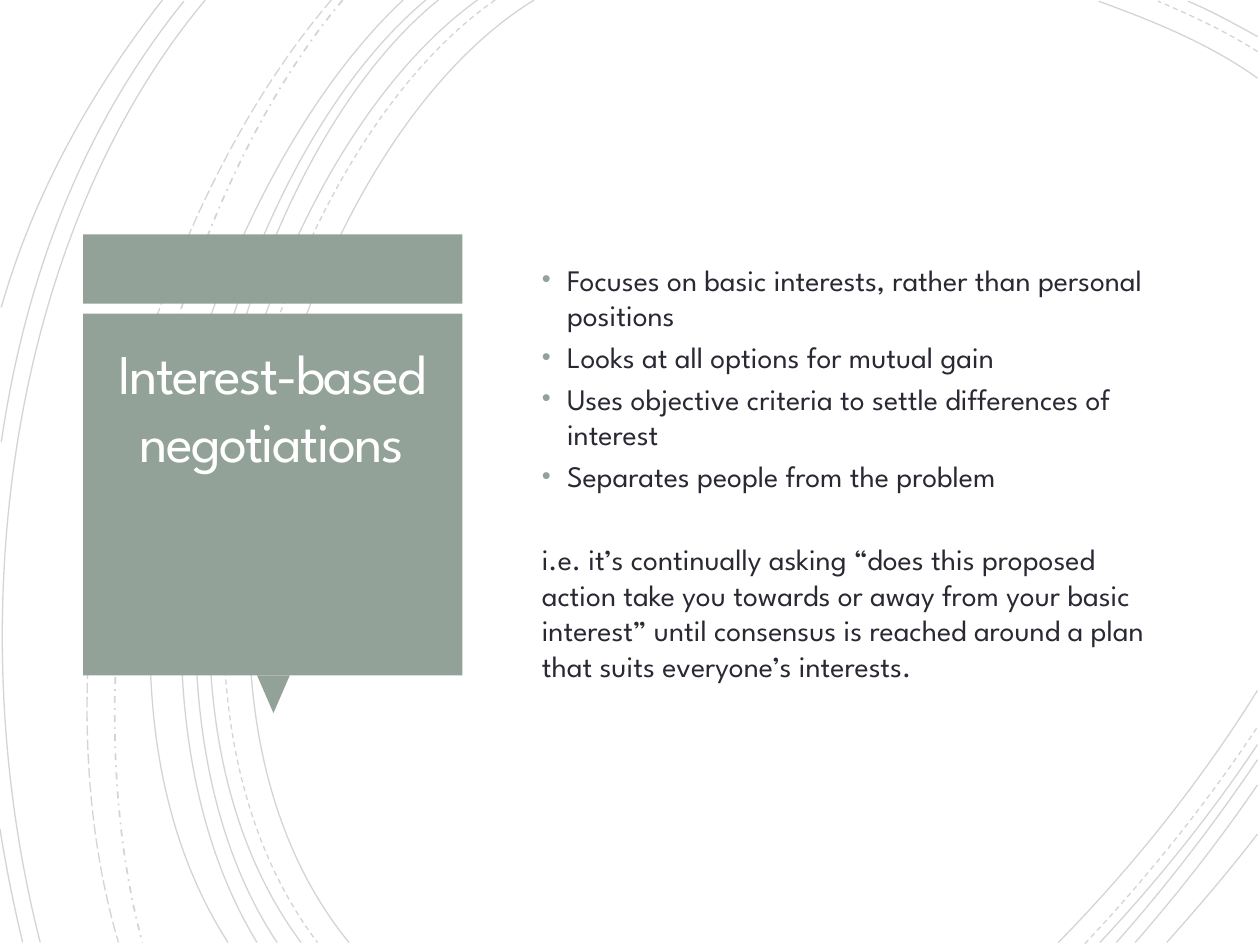
from lxml.etree import SubElement
from pptx import Presentation
from pptx.dml.color import RGBColor
from pptx.enum.dml import MSO_LINE
from pptx.enum.shapes import MSO_SHAPE
from pptx.enum.text import MSO_ANCHOR, MSO_AUTO_SIZE, PP_ALIGN
from pptx.oxml.ns import qn
from pptx.util import Inches, Pt

FONT = "League Spartan"
INK, SAGE, WHITE = "292934", "93A299", "FFFFFF"

TITLE = "Interest-based negotiations"
POINTS = [
    "Focuses on basic interests, rather than personal positions",
    "Looks at all options for mutual gain",
    "Uses objective criteria to settle differences of interest",
    "Separates people from the problem",
]
SUMMARY = (
    "i.e. it’s continually asking “does this proposed action take you towards or away "
    "from your basic interest” until consensus is reached around a plan that suits "
    "everyone’s interests."
)

# Each arc: start, two control points, end
SOLID_ARCS = [
    [(4.24, 0), (2.36, 1.15), (1.07, 5.4), (2.77, 7.48)],
    [(9.98, 0.62), (9.59, 0.34), (9.13, 0.16), (8.72, 0.01)],
    [(8.4, 7.48), (8.97, 6.9), (9.52, 6.22), (9.98, 5.48)],
    [(3.79, 0), (2.02, 1.27), (0.82, 5.37), (2.39, 7.48)],
    [(9.98, 0.29), (9.8, 0.19), (9.62, 0.09), (9.43, 0.01)],
    [(8.73, 7.48), (9.17, 7.01), (9.6, 6.48), (9.98, 5.91)],
    [(3.48, 0), (1.83, 1.33), (0.82, 5.41), (2.2, 7.48)],
    [(8.86, 7.48), (9.25, 7.04), (9.63, 6.55), (9.98, 6.03)],
    [(3.38, 0), (1.73, 1.38), (0.73, 5.33), (2.04, 7.48)],
    [(9.01, 7.48), (9.35, 7.09), (9.68, 6.67), (9.98, 6.23)],
    [(3.2, 0), (1.63, 1.47), (0.4, 5.29), (1.81, 7.48)],
    [(9.26, 7.48), (9.5, 7.21), (9.75, 6.92), (9.98, 6.62)],
    [(1.63, 0), (0.08, 1.85), (-0.34, 4.9), (0.32, 7.48)],
    [(1.46, 0.01), (0.69, 0.96), (0.21, 2.14), (0.01, 3.51)],
    [(0, 6.58), (0.05, 6.89), (0.11, 7.19), (0.18, 7.48)],
    [(1.29, 0), (0.75, 0.69), (0.28, 1.5), (0.01, 2.44)],
]
DASHED_ARCS = [
    [(3.93, 0), (2.13, 1.25), (0.92, 5.37), (2.52, 7.48)],
    [(9.98, 0.41), (9.73, 0.25), (9.45, 0.12), (9.19, 0.01)],
    [(8.61, 7.49), (9.09, 6.98), (9.56, 6.4), (9.98, 5.77)],
]
DASH_DOT_ARCS = [[(2.72, 0), (1.32, 1.66), (0.49, 5.09), (1.13, 7.48)]]
LONG_DASH_ARCS = [[(2.63, 0), (1.18, 1.69), (0.21, 4.99), (0.94, 7.48)]]
ARC_STYLES = [
    (SOLID_ARCS, MSO_LINE.SOLID, 0.75),
    (DASHED_ARCS, MSO_LINE.DASH, 0.75),
    (DASH_DOT_ARCS, MSO_LINE.DASH_DOT, 1),
    (LONG_DASH_ARCS, MSO_LINE.LONG_DASH, 0.75),
]

CALLOUT = [
    (MSO_SHAPE.RECTANGLE, (0.66, 1.86, 3.01, 0.55), 0),
    (MSO_SHAPE.ISOSCELES_TRIANGLE, (2.04, 5.36, 0.26, 0.3), 180),
    (MSO_SHAPE.RECTANGLE, (0.66, 2.49, 3.01, 2.87), 0),
]


def rgb(value):
    return RGBColor.from_string(value)


def draw_arc(shapes, points, dash, width):
    """Draw a faint Bezier: a three-segment outline whose vertices become one cubic."""
    start, *rest = [(Inches(x), Inches(y)) for x, y in points]
    builder = shapes.build_freeform(*start)
    builder.add_line_segments(rest, close=False)
    arc = builder.convert_to_shape()
    segments = list(arc._element.iter(qn("a:lnTo")))
    outline = segments[0].getparent()
    cubic = SubElement(outline, qn("a:cubicBezTo"))
    for segment in segments:
        cubic.append(segment[0])
        outline.remove(segment)
    arc.shadow.inherit = False
    arc.fill.background()
    arc.line.color.rgb = rgb(INK)
    arc.line.width = Pt(width)
    arc.line.dash_style = dash
    color = next(arc.line._ln.iter(qn("a:srgbClr")))
    SubElement(color, qn("a:alpha"), val="20000")


def place(holder, left, top, width, height, anchor):
    holder.left, holder.top = Inches(left), Inches(top)
    holder.width, holder.height = Inches(width), Inches(height)
    frame = holder.text_frame
    frame.word_wrap = True
    frame.auto_size = MSO_AUTO_SIZE.NONE
    frame.vertical_anchor = anchor
    return frame


def add_run(paragraph, text, size, color):
    run = paragraph.add_run()
    run.text = text
    run.font.name = FONT
    run.font.size = Pt(size)
    run.font.color.rgb = rgb(color)
    return run


def set_bullet(paragraph, shown):
    indent = Inches(0.2) if shown else 0
    props = paragraph._p.get_or_add_pPr()
    props.set("marL", str(indent))
    props.set("indent", str(-indent))
    if shown:
        SubElement(SubElement(props, qn("a:buClr")), qn("a:srgbClr"), val=SAGE)
        SubElement(props, qn("a:buSzPct"), val="85000")
        SubElement(props, qn("a:buFont"), typeface="Arial")
        SubElement(props, qn("a:buChar"), char="•")
    else:
        SubElement(props, qn("a:buNone"))


def main():
    deck = Presentation()
    deck.slide_width, deck.slide_height = Inches(10), Inches(7.5)
    slide = deck.slides.add_slide(deck.slide_layouts[1])
    slide.background.fill.solid()
    slide.background.fill.fore_color.rgb = rgb(WHITE)
    title, body = slide.placeholders

    for arcs, dash, width in ARC_STYLES:
        for points in arcs:
            draw_arc(slide.shapes, points, dash, width)

    for kind, box, rotation in CALLOUT:
        panel = slide.shapes.add_shape(kind, *map(Inches, box))
        panel.rotation = rotation
        panel.shadow.inherit = False
        panel.fill.solid()
        panel.fill.fore_color.rgb = rgb(SAGE)
        panel.line.fill.background()

    # Text goes in front of the artwork
    for holder in (title, body):
        slide.shapes._spTree.append(holder._element)

    heading = place(title, 0.74, 2.64, 2.83, 2.62, MSO_ANCHOR.TOP).paragraphs[0]
    heading.alignment = PP_ALIGN.CENTER
    run = add_run(heading, TITLE, 32, WHITE)
    run.font._element.set("spc", "-100")

    frame = place(body, 4.2, 0.88, 5.15, 5.74, MSO_ANCHOR.MIDDLE)
    for i, text in enumerate(POINTS + [SUMMARY]):
        paragraph = frame.paragraphs[0] if i == 0 else frame.add_paragraph()
        is_point = i < len(POINTS)
        set_bullet(paragraph, is_point)
        paragraph.space_before = Pt(0 if i == 0 else 3.4 if is_point else 27)
        add_run(paragraph, text, 17, INK)

    deck.save("out.pptx")


if __name__ == "__main__":
    main()
